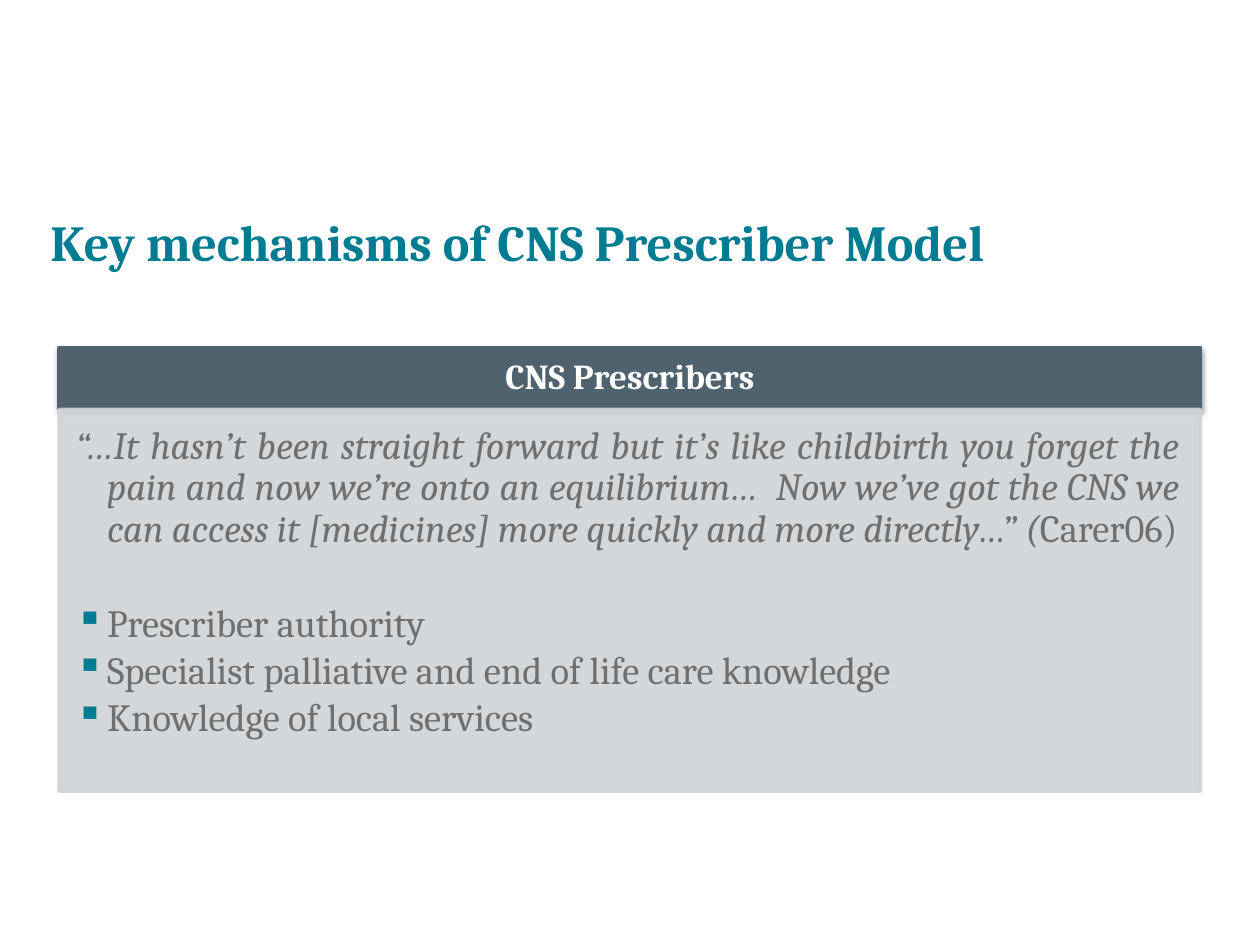
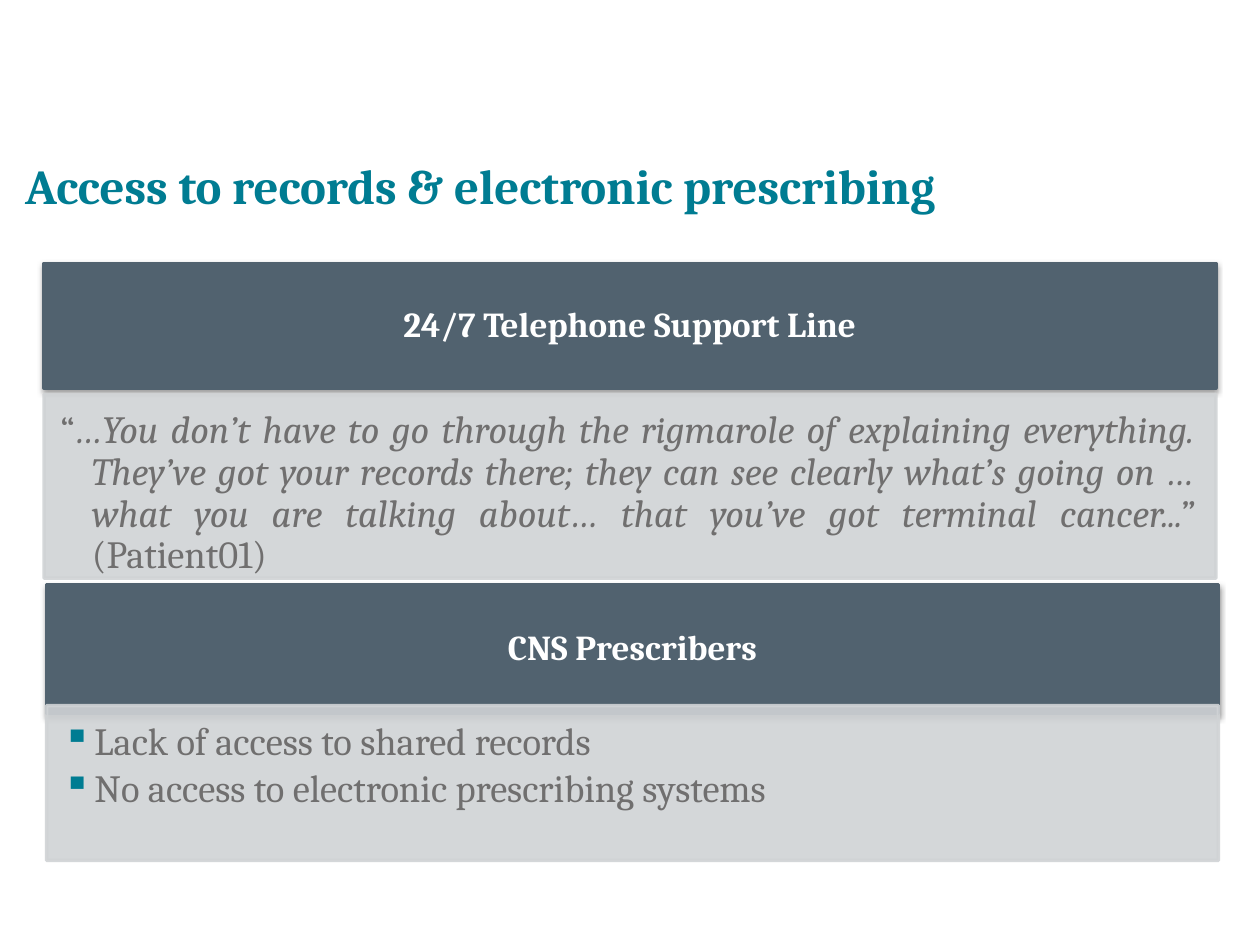
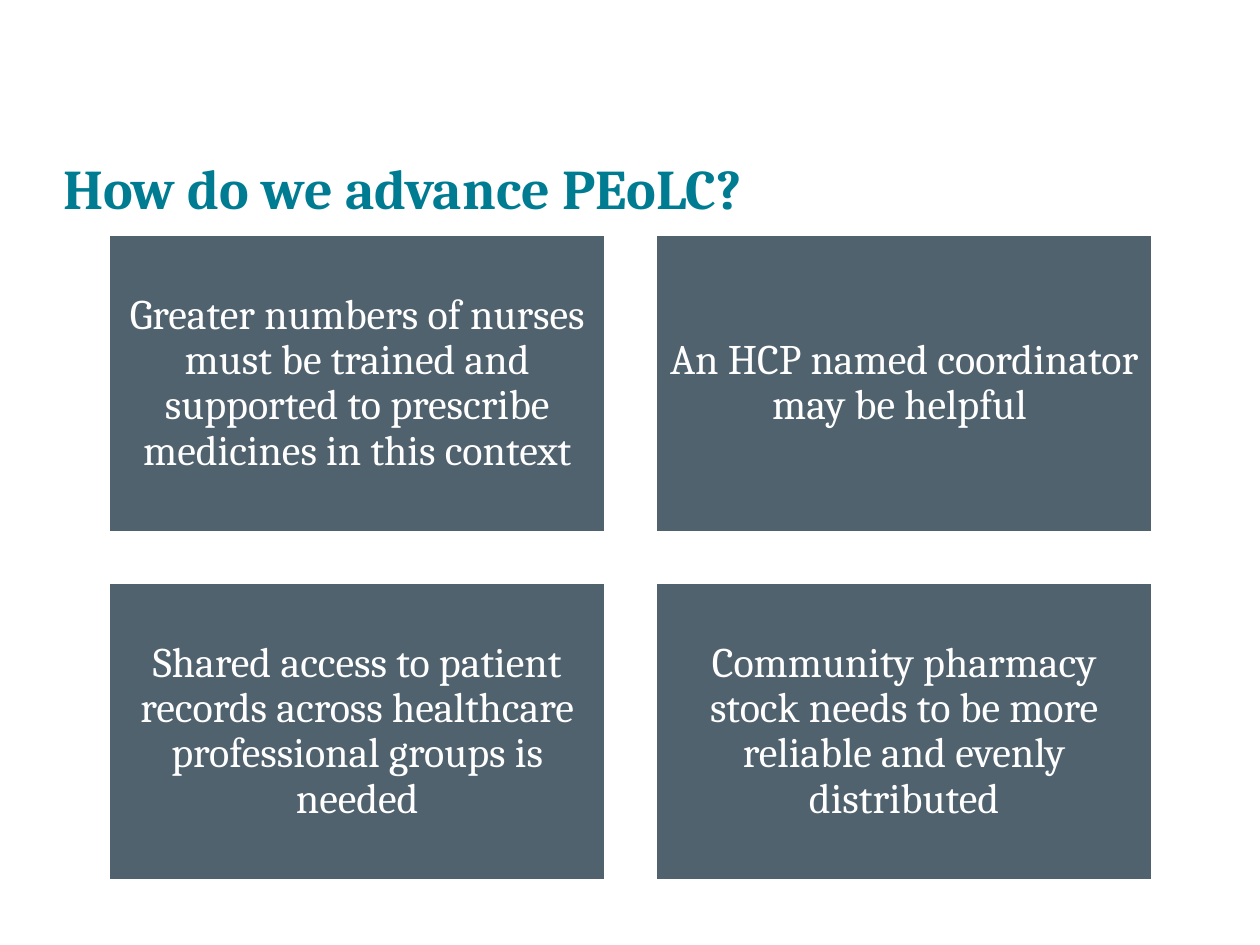
from lxml import etree
from pptx import Presentation
from pptx.dml.color import RGBColor
from pptx.enum.shapes import MSO_SHAPE
from pptx.enum.text import MSO_ANCHOR, MSO_AUTO_SIZE, PP_ALIGN
from pptx.oxml import parse_xml
from pptx.oxml.ns import nsdecls, qn
from pptx.util import Inches, Pt

RECT = MSO_SHAPE.RECTANGLE
TOP, MIDDLE = MSO_ANCHOR.TOP, MSO_ANCHOR.MIDDLE
LEFT, CENTER, JUSTIFY = PP_ALIGN.LEFT, PP_ALIGN.CENTER, PP_ALIGN.JUSTIFY
FIXED = MSO_AUTO_SIZE.NONE
TITLE_ONLY = 5

FONT = "Cambria"
COLORS = {"teal": "007C92", "slate": "51626F", "pale": "D0D3D5",
          "gray": "706F6F", "white": "FFFFFF"}
BODY_SIZE = 22
BODY_GAP = 3.3
INDENT = Inches(0.25)


def rgb(name):
    return RGBColor.from_string(COLORS[name])


def add_run(p, text, size, color, bold=False, italic=False):
    r = p.add_run()
    r.text = text
    r.font.name, r.font.size = FONT, Pt(size)
    r.font.bold, r.font.italic = bold, italic
    r.font.color.rgb = rgb(color)


def set_frame(tf, anchor, insets):
    tf.word_wrap = True
    tf.auto_size = FIXED
    tf.vertical_anchor = anchor
    tf.margin_left, tf.margin_top, tf.margin_right, tf.margin_bottom = map(Inches, insets)


def add_box(s, box, fill, line, anchor, insets):
    sp = s.shapes.add_shape(RECT, *map(Inches, box))
    sp.shadow.inherit = False
    sp.fill.solid()
    sp.fill.fore_color.rgb = rgb(fill)
    sp.line.color.rgb = rgb(line)
    sp.line.width = Pt(2)
    set_frame(sp.text_frame, anchor, insets)
    return sp


def add_centered(sp, text, size, bold=False):
    p = sp.text_frame.paragraphs[0]
    p.alignment, p.line_spacing = CENTER, 0.9
    add_run(p, text, size, "white", bold)


def add_shadow(sp):
    effects = sp._element.spPr.find(qn("a:effectLst"))
    effects.append(parse_xml(
        f'<a:outerShdw {nsdecls("a")} blurRad="{Pt(3.1)}" dist="{Pt(1.6)}" dir="5400000" '
        'rotWithShape="0"><a:srgbClr val="000000"><a:alpha val="38000"/></a:srgbClr>'
        '</a:outerShdw>'))


def set_opacity(sp, percent):
    for color in sp._element.spPr.iter(qn("a:srgbClr")):
        etree.SubElement(color, qn("a:alpha"), val=str(percent * 1000))


def add_bullet(p):
    pPr = p._p.get_or_add_pPr()
    color = etree.SubElement(pPr, qn("a:buClr"))
    etree.SubElement(color, qn("a:srgbClr"), val=COLORS["teal"])
    etree.SubElement(pPr, qn("a:buChar"), char="▪")


def new_slide(prs, title, left, top, width, size):
    s = prs.slides.add_slide(prs.slide_layouts[TITLE_ONLY])
    sp = s.shapes.title
    sp.left, sp.top, sp.width, sp.height = map(Inches, (left, top, width, 0.79))
    set_frame(sp.text_frame, TOP, (0, 0, 0, 0))
    p = sp.text_frame.paragraphs[0]
    p.alignment, p.line_spacing = LEFT, 0.85
    add_run(p, title, size, "teal", bold=True)
    return s


def add_panel(s, box, head_h, body_h, heading, quote=(), bullets=()):
    """Heading bar at the top of the box, text area at its bottom."""
    left, top, width, height = box
    head = add_box(s, (left, top, width, head_h), "slate", "slate",
                   MIDDLE, (0.16, 0.09, 0.16, 0.09))
    add_shadow(head)
    add_centered(head, heading, 20, bold=True)

    body = add_box(s, (left, top + height - body_h, width, body_h), "pale", "pale",
                   TOP, (0.13, 0.13, 0.17, 0.19))
    set_opacity(body, 90)

    # The quote, if any, comes first; bullets follow
    items = [(quote, False)] if quote else []
    items += [([(text, False)], True) for text in bullets]
    tf = body.text_frame
    for i, (runs, bulleted) in enumerate(items):
        p = tf.add_paragraph() if i else tf.paragraphs[0]
        pPr = p._p.get_or_add_pPr()
        pPr.set("marL", str(INDENT))
        pPr.set("indent", str(-INDENT))
        if bulleted:
            add_bullet(p)
        p.alignment = LEFT if bulleted else JUSTIFY
        p.line_spacing = 0.9
        p.space_after = Pt(BODY_GAP if bulleted else 30.5)
        for text, italic in runs:
            add_run(p, text, BODY_SIZE, "gray", italic=italic)


def add_card_grid(s, left, top, texts, columns=2):
    width, height, gap = 3.95, 2.37, 0.39
    for i, text in enumerate(texts):
        row, col = divmod(i, columns)
        box = (left + col * (width + gap), top + row * (height + gap), width, height)
        card = add_box(s, box, "slate", "white", MIDDLE, (0.1,) * 4)
        add_centered(card, text, 24)


def main():
    prs = Presentation()
    prs.slide_width, prs.slide_height = Inches(10), Inches(7.5)

    # Key mechanisms
    s = new_slide(prs, "Key mechanisms of CNS Prescriber Model", 0.4, 1.75, 9.18, 28.8)
    add_panel(s, (0.47, 2.76, 9.06, 3.52), 0.48, 3.03, "CNS Prescribers",
              quote=[("“…It hasn’t been straight forward but it’s like childbirth you "
                      "forget the pain and now we’re onto an equilibrium…  Now we’ve got "
                      "the CNS we can access it [medicines] more quickly and more "
                      "directly…” (", True), ("Carer06)", False)],
              bullets=["Prescriber authority",
                       "Specialist palliative and end of life care knowledge",
                       "Knowledge of local services"])

    # Access to records
    s = new_slide(prs, "Access to records & electronic prescribing", 0.2, 1.31, 9.6, 27.9)
    add_panel(s, (0.35, 2.09, 9.3, 2.5), 0.99, 1.46, "24/7 Telephone Support Line",
              quote=[("“", False),
                     ("…You don’t have to go through the rigmarole of explaining "
                      "everything. They’ve got your records there; they can see clearly "
                      "what’s going on … what you are talking about… that you’ve got "
                      "terminal cancer...” ", True), ("(Patient01)", False)])
    add_panel(s, (0.37, 4.64, 9.3, 2.19), 1.02, 1.23, "CNS Prescribers",
              bullets=["Lack of access to shared records",
                       "No access to electronic prescribing systems"])

    # Ways forward
    s = new_slide(prs, "How do we advance PEoLC?", 0.5, 1.3, 8.98, 32)
    add_card_grid(s, 0.86, 1.86, [
        "Greater numbers of nurses must be trained and supported to prescribe "
        "medicines in this context",
        "An HCP named coordinator may be helpful ",
        "Shared access to patient records across healthcare professional groups is needed",
        "Community pharmacy stock needs to be more reliable and evenly distributed"])

    prs.save("out.pptx")


if __name__ == "__main__":
    main()
